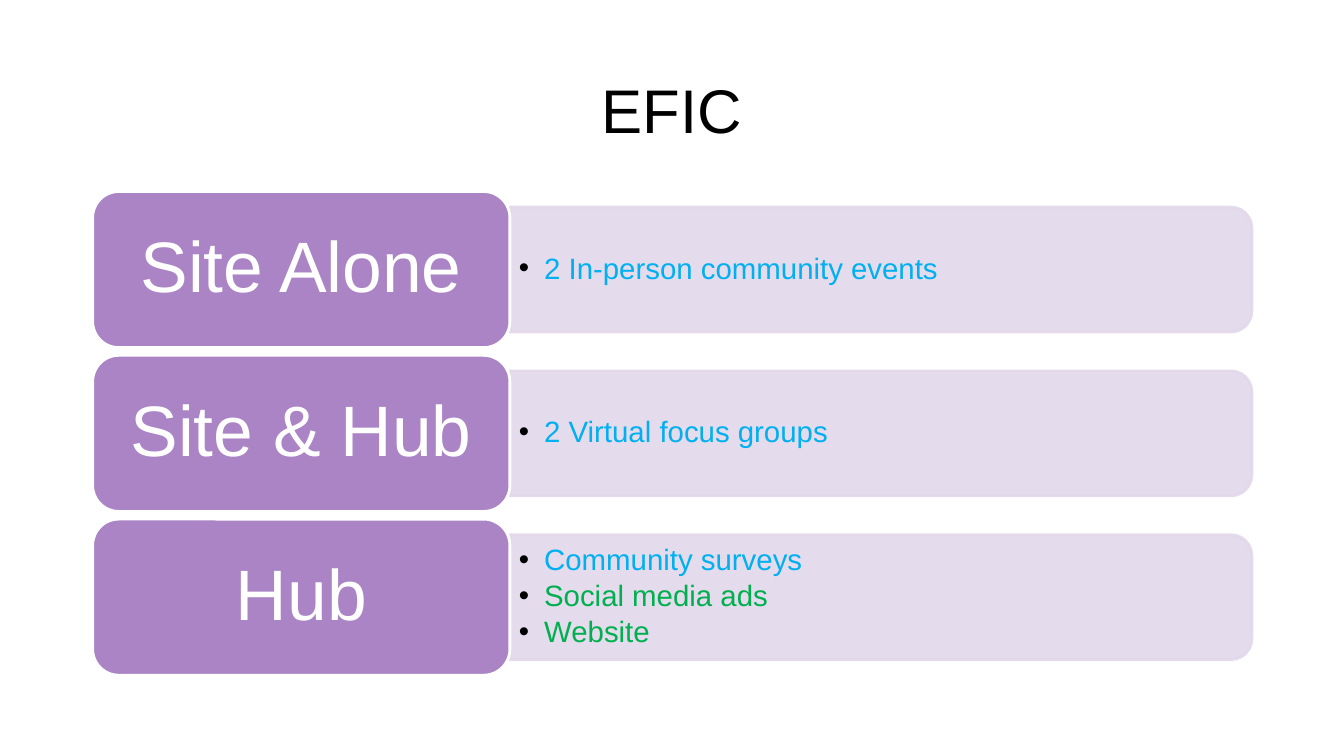
from lxml import etree
from pptx import Presentation
from pptx import util as u
from pptx.dml.color import RGBColor
from pptx.enum import shapes, text
from pptx.oxml.ns import qn

COLORS = {
    "black": "000000", "white": "FFFFFF", "purple": "AB84C6",
    "lilac": "E2D8EA", "blue": "00B0F0", "green": "00B050",
}
ROWS = [
    ("Site Alone", [("2 In-person community events", "blue")]),
    ("Site & Hub", [("2 Virtual focus groups", "blue")]),
    ("Hub", [("Community surveys", "blue"), ("Social media ads", "green"), ("Website", "green")]),
]
LEFT, TOP, PITCH = 66.2, 136.8, 117
LABEL_W, LABEL_H = 298, 111.5
PANEL_W, PANEL_H = 530, 89.2


def add_run(p, words, size, color):
    p.line_spacing = 0.9
    r = p.add_run()
    r.text = words
    r.font.name = "Arial"
    r.font.size = u.Pt(size)
    r.font.color.rgb = RGBColor.from_string(COLORS[color])


def style(sp, fill, line):
    sp.shadow.inherit = False
    sp.fill.solid()
    sp.fill.fore_color.rgb = RGBColor.from_string(COLORS[fill])
    sp.line.color.rgb = RGBColor.from_string(COLORS[line])
    sp.line.width = u.Pt(2)
    sp.adjustments[0] = 0.167


prs = Presentation()
prs.slide_width, prs.slide_height = u.Pt(960), u.Pt(540)
s = prs.slides.add_slide(prs.slide_layouts[6])

title = s.shapes.add_textbox(u.Pt(66), u.Pt(28.8), u.Pt(828), u.Pt(104.4))
tf = title.text_frame
tf.word_wrap = True
tf.vertical_anchor = text.MSO_ANCHOR.MIDDLE
tf.paragraphs[0].alignment = text.PP_ALIGN.CENTER
add_run(tf.paragraphs[0], "EFIC", 44, "black")

for i, (label, items) in enumerate(ROWS):
    top = TOP + i * PITCH
    middle = top + LABEL_H / 2
    right = LEFT + LABEL_W

    panel = s.shapes.add_shape(
        shapes.MSO_SHAPE.ROUND_2_SAME_RECTANGLE,
        u.Pt(right + (PANEL_W - PANEL_H) / 2), u.Pt(middle - PANEL_W / 2),
        u.Pt(PANEL_H), u.Pt(PANEL_W))
    panel.rotation = 90
    style(panel, "lilac", "lilac")
    panel.adjustments[1] = 0
    for clr in panel._element.spPr.iter(qn("a:srgbClr")):
        etree.SubElement(clr, qn("a:alpha"), val="90000")

    box = s.shapes.add_textbox(u.Pt(right), u.Pt(middle - 40.3), u.Pt(525.6), u.Pt(80.6))
    tf = box.text_frame
    tf.word_wrap = True
    tf.vertical_anchor = text.MSO_ANCHOR.MIDDLE
    tf.margin_left = tf.margin_right = u.Pt(6.5)
    tf.margin_top = tf.margin_bottom = u.Pt(3)
    for n, (words, color) in enumerate(items):
        p = tf.add_paragraph() if n else tf.paragraphs[0]
        p.level = 1
        p.space_before = u.Pt(3.1 if n else 0)
        add_run(p, words, 21, color)
        pPr = p._p.get_or_add_pPr()
        pPr.set("marL", str(u.Pt(18)))
        pPr.set("indent", str(-u.Pt(18)))
        bullet_color = etree.SubElement(pPr, qn("a:buClr"))
        etree.SubElement(bullet_color, qn("a:srgbClr"), val=COLORS["black"])
        etree.SubElement(pPr, qn("a:buFont"), typeface="Arial")
        etree.SubElement(pPr, qn("a:buChar"), char="•")

    sp = s.shapes.add_shape(
        shapes.MSO_SHAPE.ROUNDED_RECTANGLE,
        u.Pt(LEFT), u.Pt(top), u.Pt(LABEL_W), u.Pt(LABEL_H))
    style(sp, "purple", "white")
    tf = sp.text_frame
    tf.word_wrap = True
    tf.vertical_anchor = text.MSO_ANCHOR.MIDDLE
    tf.paragraphs[0].alignment = text.PP_ALIGN.CENTER
    add_run(tf.paragraphs[0], label, 51, "white")

prs.save("out.pptx")
